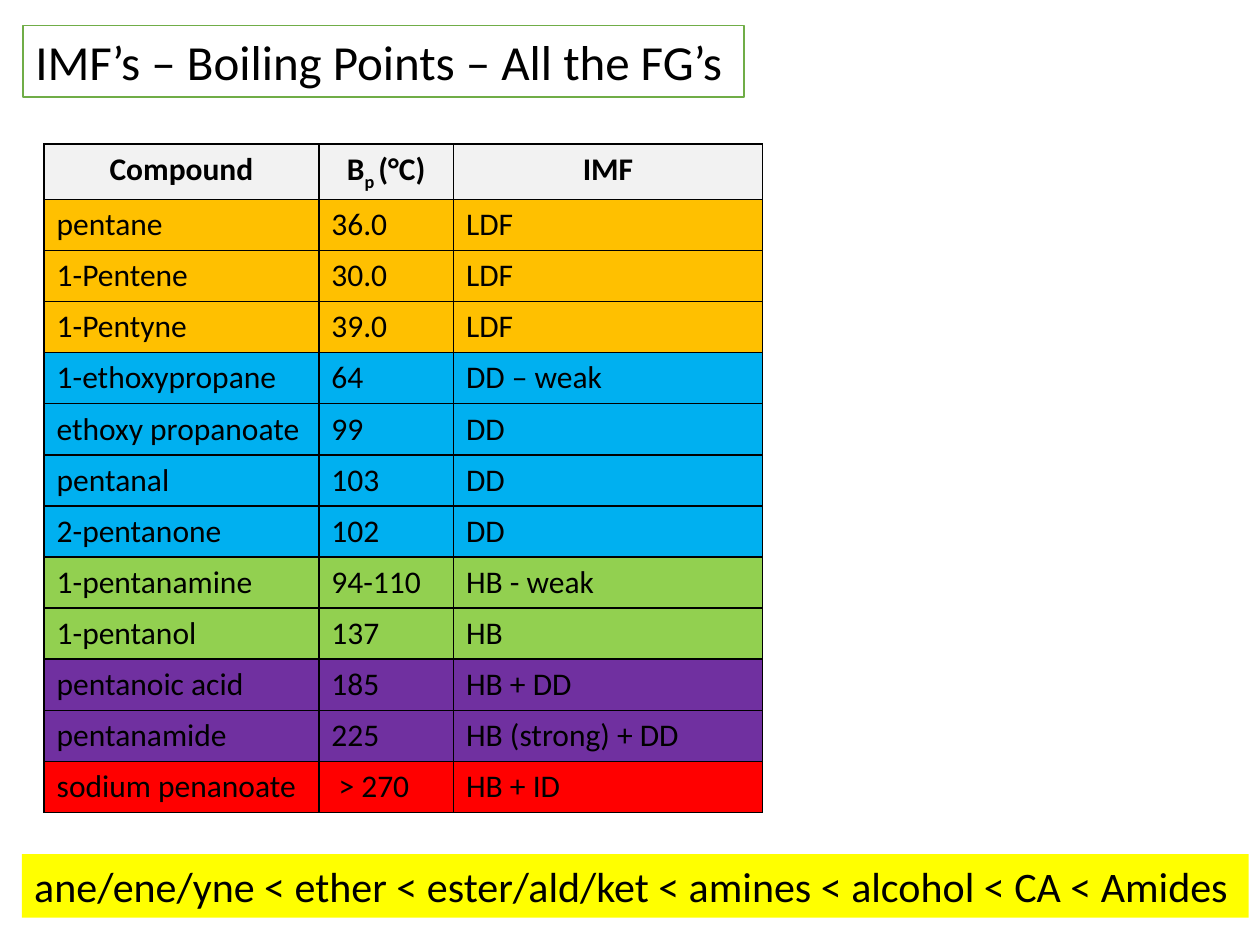
import pptx
import pptx.util
import pptx.dml.color
import pptx.enum.shapes
import pptx.enum.text
import pptx.oxml
import pptx.oxml.ns

Pt = pptx.util.Pt
RGBColor = pptx.dml.color.RGBColor
ALIGN = pptx.enum.text.PP_ALIGN
ANCHOR = pptx.enum.text.MSO_ANCHOR

BLACK = RGBColor(0x00, 0x00, 0x00)
WHITE = RGBColor(0xFF, 0xFF, 0xFF)
OUTLINE_GREEN = RGBColor(0x70, 0xAD, 0x47)
YELLOW = RGBColor(0xFF, 0xFF, 0x00)
HEADER_GREY = RGBColor(0xF2, 0xF2, 0xF2)
ORANGE = RGBColor(0xFF, 0xC0, 0x00)
BLUE = RGBColor(0x00, 0xB0, 0xF0)
GREEN = RGBColor(0x92, 0xD0, 0x50)
PURPLE = RGBColor(0x70, 0x30, 0xA0)
RED = RGBColor(0xFF, 0x00, 0x00)

COMPOUNDS = [
    (ORANGE, "pentane", "36.0", "LDF"),
    (ORANGE, "1-Pentene", "30.0", "LDF"),
    (ORANGE, "1-Pentyne", "39.0", "LDF"),
    (BLUE, "1-ethoxypropane", "64", "DD – weak"),
    (BLUE, "ethoxy propanoate", "99", "DD"),
    (BLUE, "pentanal", "103", "DD"),
    (BLUE, "2-pentanone", "102", "DD"),
    (GREEN, "1-pentanamine", "94-110", "HB - weak"),
    (GREEN, "1-pentanol", "137", "HB"),
    (PURPLE, "pentanoic acid", "185", "HB + DD"),
    (PURPLE, "pentanamide", "225", "HB (strong) + DD"),
    (RED, "sodium penanoate", " > 270", "HB + ID"),
]
COLUMN_WIDTHS = [157, 77, 176.5]
ROW_HEIGHT = 29.2


def format_runs(paragraph, size, bold=False):
    for run in paragraph.runs:
        run.font.name = "Calibri"
        run.font.size = Pt(size)
        run.font.bold = bold
        run.font.color.rgb = BLACK


def add_borders(cell):
    for side in ("lnL", "lnR", "lnT", "lnB"):
        cell._tc.get_or_add_tcPr().append(pptx.oxml.parse_xml(
            f'<a:{side} {pptx.oxml.ns.nsdecls("a")} w="{Pt(1)}">'
            f'<a:solidFill><a:srgbClr val="{BLACK}"/></a:solidFill></a:{side}>'))


deck = pptx.Presentation()
deck.slide_width = Pt(720)
deck.slide_height = Pt(540)
slide = deck.slides.add_slide(deck.slide_layouts[5])

title = slide.shapes.title
title.left, title.top, title.width, title.height = Pt(13), Pt(14.5), Pt(412), Pt(41)
title.fill.solid()
title.fill.fore_color.rgb = WHITE
title.line.color.rgb = OUTLINE_GREEN
title.line.width = Pt(1)
title.text_frame.text = "IMF’s – Boiling Points – All the FG’s"
title.text_frame.word_wrap = False
title.text_frame.auto_size = pptx.enum.text.MSO_AUTO_SIZE.NONE
title.text_frame.vertical_anchor = ANCHOR.TOP
title.text_frame.paragraphs[0].alignment = ALIGN.LEFT
format_runs(title.text_frame.paragraphs[0], 28)

ranking = slide.shapes.add_shape(
    pptx.enum.shapes.MSO_SHAPE.RECTANGLE, Pt(12.5), Pt(488), Pt(701), Pt(36.3))
ranking.shadow.inherit = False
ranking.fill.solid()
ranking.fill.fore_color.rgb = YELLOW
ranking.line.fill.background()
ranking.text_frame.text = (
    "ane/ene/yne < ether < ester/ald/ket < amines < alcohol < CA < Amides")
ranking.text_frame.word_wrap = True
ranking.text_frame.vertical_anchor = ANCHOR.TOP
ranking.text_frame.paragraphs[0].alignment = ALIGN.LEFT
format_runs(ranking.text_frame.paragraphs[0], 24)

rows = [(HEADER_GREY, "Compound", "", "IMF")] + COMPOUNDS
boiling_points = slide.shapes.add_table(
    len(rows), len(COLUMN_WIDTHS), Pt(25.2), Pt(82.3),
    Pt(sum(COLUMN_WIDTHS)), Pt(ROW_HEIGHT * len(rows))).table
for column, width in zip(boiling_points.columns, COLUMN_WIDTHS):
    column.width = Pt(width)

bp_heading = boiling_points.cell(0, 1).text_frame.paragraphs[0]
for part in ("B", "p ", "(°C)"):
    bp_heading.add_run().text = part
bp_heading.runs[1].font._element.set("baseline", "-25000")

for r, (colour, *values) in enumerate(rows):
    boiling_points.rows[r].height = Pt(ROW_HEIGHT)
    for c, value in enumerate(values):
        cell = boiling_points.cell(r, c)
        add_borders(cell)
        cell.fill.solid()
        cell.fill.fore_color.rgb = colour
        paragraph = cell.text_frame.paragraphs[0]
        if value:
            cell.text_frame.text = value
        paragraph = cell.text_frame.paragraphs[0]
        paragraph.alignment = ALIGN.CENTER if r == 0 else ALIGN.LEFT
        format_runs(paragraph, 18, bold=r == 0)

deck.save("out.pptx")
